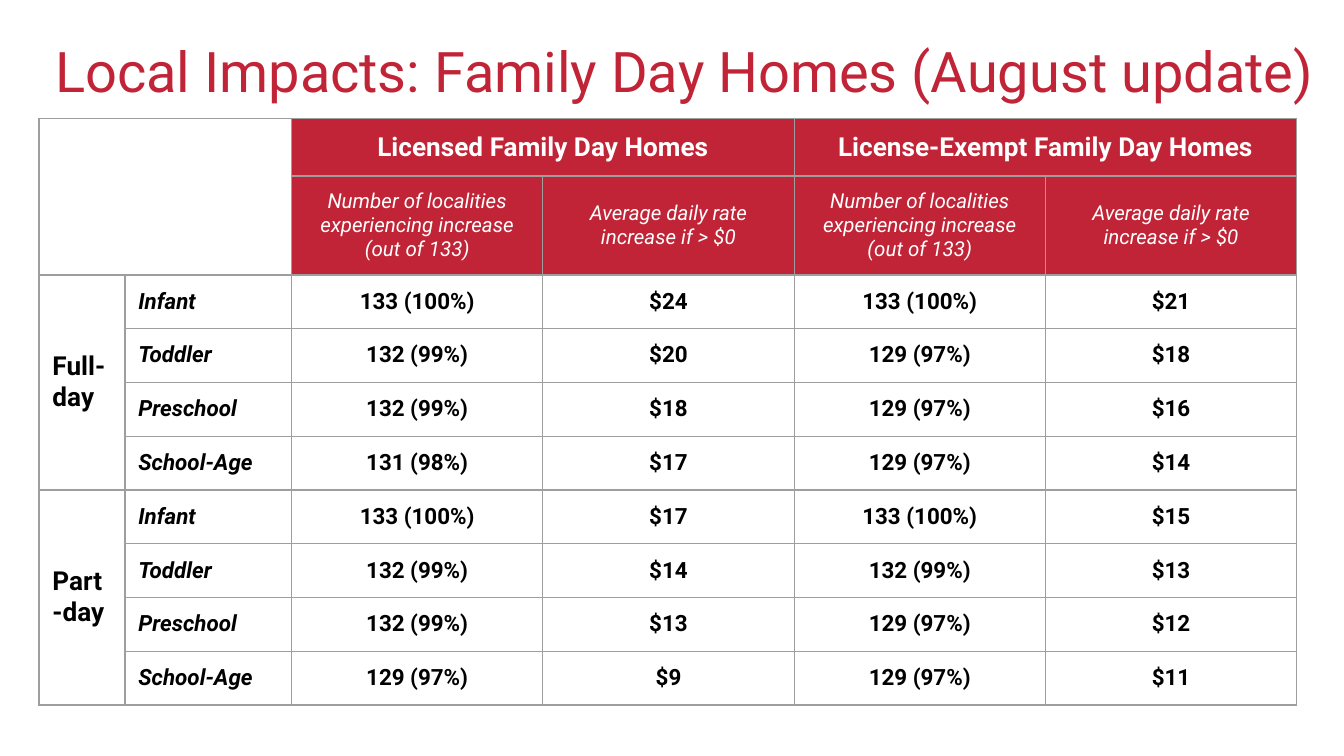
from lxml import etree
from pptx import Presentation
from pptx import util as u
from pptx.dml.color import RGBColor
from pptx.enum import text
from pptx.oxml import ns

TITLE = "Local Impacts: Family Day Homes (August update)"
GROUPS = ["Licensed Family Day Homes", "License-Exempt Family Day Homes"]
HEADS = ["Number of localities experiencing increase (out of 133)",
         "Average daily rate increase if > $0"]
DAYS = {
    "Full-day": [
        ("Infant", "133 (100%)", "$24", "133 (100%)", "$21"),
        ("Toddler", "132 (99%)", "$20", "129 (97%)", "$18"),
        ("Preschool", "132 (99%)", "$18", "129 (97%)", "$16"),
        ("School-Age", "131 (98%)", "$17", "129 (97%)", "$14"),
    ],
    "Part-day": [
        ("Infant", "133 (100%)", "$17", "133 (100%)", "$15"),
        ("Toddler", "132 (99%)", "$14", "132 (99%)", "$13"),
        ("Preschool", "132 (99%)", "$13", "129 (97%)", "$12"),
        ("School-Age", "129 (97%)", "$9", "129 (97%)", "$11"),
    ],
}
WIDE = u.Inches(10)
HIGH = WIDE * 9 // 16
WIDTHS = [0.64, 1.24] + [1.87] * 4
HEIGHTS = [0.43, 0.66] + [0.4] * 8

FONT = "Roboto"
RED = RGBColor(0xC1, 0x24, 0x36)
WHITE = RGBColor(0xFF, 0xFF, 0xFF)
BLACK = RGBColor(0, 0, 0)
GRAY = RGBColor(0x9E, 0x9E, 0x9E)


def style(para, size, color, bold=False, italic=False):
    font = para.font
    font.name, font.size, font.color.rgb = FONT, u.Pt(size), color
    font.bold, font.italic = bold, italic


def border(cell):
    props = cell._tc.get_or_add_tcPr()
    for side in ("a:lnL", "a:lnR", "a:lnT", "a:lnB"):
        line = etree.SubElement(props, ns.qn(side), w=str(u.Pt(0.75)))
        fill = etree.SubElement(line, ns.qn("a:solidFill"))
        etree.SubElement(fill, ns.qn("a:srgbClr"), val=str(GRAY))


def dress(cell, row, col):
    head = row < 2 and col > 1
    cell.margin_left = cell.margin_right = u.Inches(0.1)
    cell.margin_top = cell.margin_bottom = u.Inches(0.1)
    if row == 1 or col == 0:
        cell.vertical_anchor = text.MSO_ANCHOR.MIDDLE
    border(cell)
    if head:
        cell.fill.solid()
        cell.fill.fore_color.rgb = RED
    else:
        cell.fill.background()
    size = 11 if row == 1 else 14 if row == 0 or col == 0 else 12
    para = cell.text_frame.paragraphs[0]
    para.alignment = text.PP_ALIGN.CENTER if col > 1 else text.PP_ALIGN.LEFT
    style(para, size, WHITE if head else BLACK, row != 1, row == 1 or col == 1)


def main():
    deck = Presentation()
    deck.slide_width, deck.slide_height = WIDE, HIGH
    slide = deck.slides.add_slide(deck.slide_layouts[5])

    title = slide.shapes.title
    title.left, title.top = u.Inches(0.34), u.Inches(0.24)
    title.width, title.height = u.Inches(9.66), u.Inches(0.63)
    frame = title.text_frame
    frame.text = TITLE
    frame.vertical_anchor = text.MSO_ANCHOR.MIDDLE
    frame.margin_left = frame.margin_right = u.Inches(0.07)
    frame.margin_top = frame.margin_bottom = u.Inches(0.04)
    para = frame.paragraphs[0]
    para.alignment = text.PP_ALIGN.LEFT
    para.line_spacing = 0.9
    style(para, 30, RED)

    grid = slide.shapes.add_table(
        len(HEIGHTS), len(WIDTHS), u.Inches(0.29), u.Inches(0.88),
        u.Inches(sum(WIDTHS)), u.Inches(sum(HEIGHTS))).table
    grid.first_row = grid.horz_banding = False
    for col, width in zip(grid.columns, WIDTHS):
        col.width = u.Inches(width)
    for row, height in zip(grid.rows, HEIGHTS):
        row.height = u.Inches(height)

    grid.cell(0, 0).merge(grid.cell(1, 1))
    for i, group in enumerate(GROUPS):
        left = 2 + i * len(HEADS)
        grid.cell(0, left).text = group
        grid.cell(0, left).merge(grid.cell(0, left + len(HEADS) - 1))
        for j, head in enumerate(HEADS):
            grid.cell(1, left + j).text = head

    top = 2
    for day, ages in DAYS.items():
        grid.cell(top, 0).text = day
        grid.cell(top, 0).merge(grid.cell(top + len(ages) - 1, 0))
        for i, age in enumerate(ages):
            for j, value in enumerate(age, 1):
                grid.cell(top + i, j).text = value
        top += len(ages)

    for i in range(len(HEIGHTS)):
        for j in range(len(WIDTHS)):
            dress(grid.cell(i, j), i, j)

    deck.save("out.pptx")


if __name__ == "__main__":
    main()
